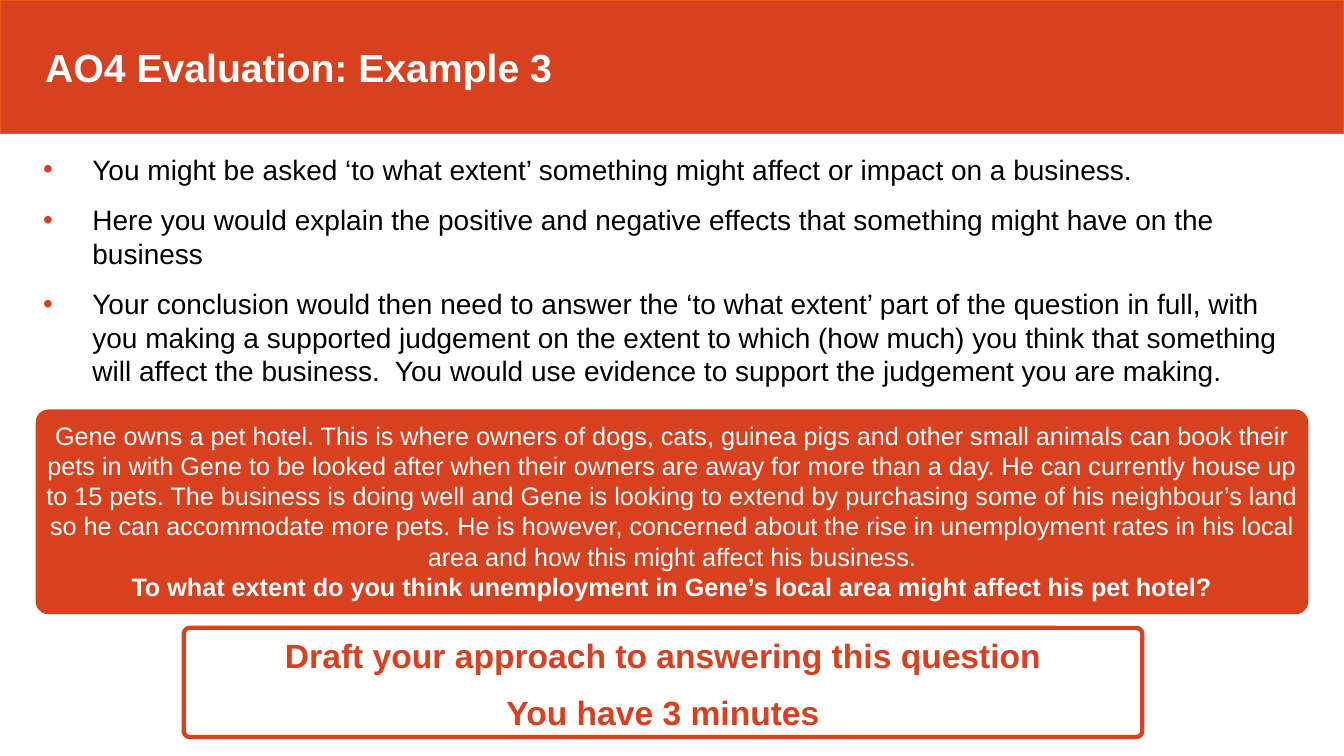
from lxml import etree
from pptx import Presentation
from pptx import util as u
from pptx.dml.color import RGBColor
from pptx.enum import shapes, text
from pptx.oxml.ns import qn

TITLE = "AO4 Evaluation: Example 3"
POINTS = [
    "You might be asked ‘to what extent’ something might affect or impact on a business.",
    "Here you would explain the positive and negative effects that something might have on the business",
    "Your conclusion would then need to answer the ‘to what extent’ part of the question in full, "
    "with you making a supported judgement on the extent to which (how much) you think that "
    "something will affect the business.  You would use evidence to support the judgement you are making.",
]
CASE = (
    "Gene owns a pet hotel. This is where owners of dogs, cats, guinea pigs and other small animals "
    "can book their pets in with Gene to be looked after when their owners are away for more than a day. "
    "He can currently house up to 15 pets. The business is doing well and Gene is looking to extend by "
    "purchasing some of his neighbour’s land so he can accommodate more pets. He is however, concerned "
    "about the rise in unemployment rates in his local area and how this might affect his business."
)
QUESTION = "To what extent do you think unemployment in Gene’s local area might affect his pet hotel?"
TASK = ["Draft your approach to answering this question", "You have 3 minutes"]

COLOURS = {"red": "D74120", "orange": "EA5B0C", "white": "FFFFFF", "black": "000000"}
FONT = "Arial"
SLIDE_SIZE = (1280, 720)
MARGIN = 36
CONTENT_WIDTH = SLIDE_SIZE[0] - 2 * MARGIN
BANNER_HEIGHT = 127
INSET = 5
TITLE_INDENT = 43
BULLET_INDENT = 47
CORNER = 0.054
BOXES = {
    "points": (MARGIN, 140, CONTENT_WIDTH, 225),
    "case": (MARGIN, 392, CONTENT_WIDTH, 191),
    "task": (175, 598, 913, 104),
}


def px(length):
    return u.Emu(length * 9525)


def colour(name):
    return RGBColor.from_string(COLOURS[name])


def prepare_frame(shape, anchor=text.MSO_ANCHOR.TOP, left=INSET):
    frame = shape.text_frame
    frame.word_wrap = True
    frame.auto_size = text.MSO_AUTO_SIZE.NONE
    frame.vertical_anchor = anchor
    frame.margin_left = px(left)
    frame.margin_top = frame.margin_right = frame.margin_bottom = px(INSET)
    return frame


def write(frame, words, size, ink, bold=False, align=text.PP_ALIGN.LEFT, before=0, bullet=None):
    """Add one paragraph, using the empty first one if it is still free."""
    paragraph = frame.paragraphs[0] if not frame.text else frame.add_paragraph()
    paragraph.alignment = align
    paragraph.space_before = u.Pt(before)
    run = paragraph.add_run()
    run.text = words
    run.font.name = FONT
    run.font.size = u.Pt(size)
    run.font.bold = bold
    run.font.color.rgb = colour(ink)
    if bullet:
        add_bullet(paragraph, bullet)


def add_bullet(paragraph, ink):
    properties = paragraph._p.get_or_add_pPr()
    properties.set("marL", str(px(BULLET_INDENT)))
    properties.set("indent", str(-px(BULLET_INDENT)))
    bullet_colour = etree.SubElement(properties, qn("a:buClr"))
    etree.SubElement(bullet_colour, qn("a:srgbClr"), val=COLOURS[ink])
    etree.SubElement(properties, qn("a:buFont"), typeface=FONT)
    etree.SubElement(properties, qn("a:buChar"), char="•")


def paint(shape, fill, line, width):
    if fill:
        shape.fill.solid()
        shape.fill.fore_color.rgb = colour(fill)
    else:
        shape.fill.background()
    shape.line.color.rgb = colour(line)
    shape.line.width = u.Pt(width)


def add_panel(slide, box, fill=None):
    panel = slide.shapes.add_shape(shapes.MSO_SHAPE.ROUNDED_RECTANGLE, *map(px, box))
    panel.adjustments[0] = CORNER
    panel.shadow.inherit = False
    paint(panel, fill, "red", 3)
    return prepare_frame(panel)


def main():
    presentation = Presentation()
    presentation.slide_width, presentation.slide_height = map(px, SLIDE_SIZE)
    slide = presentation.slides.add_slide(presentation.slide_layouts.get_by_name("Title Only"))

    title = slide.shapes.title
    title.left, title.top, title.width, title.height = map(px, (0, 0, SLIDE_SIZE[0], BANNER_HEIGHT))
    paint(title, "red", "orange", 1)
    title_frame = prepare_frame(title, text.MSO_ANCHOR.MIDDLE, TITLE_INDENT)
    write(title_frame, TITLE, 28, "white", bold=True)

    points = prepare_frame(slide.shapes.add_textbox(*map(px, BOXES["points"])))
    for point in POINTS:
        write(points, point, 20, "black", before=12, bullet="red")

    centre = text.PP_ALIGN.CENTER
    case = add_panel(slide, BOXES["case"], fill="red")
    write(case, CASE, 18, "white", align=centre)
    write(case, QUESTION, 18, "white", bold=True, align=centre)

    task = add_panel(slide, BOXES["task"])
    for line in TASK:
        write(task, line, 24, "red", bold=True, align=centre, before=12)

    presentation.save("out.pptx")


if __name__ == "__main__":
    main()
